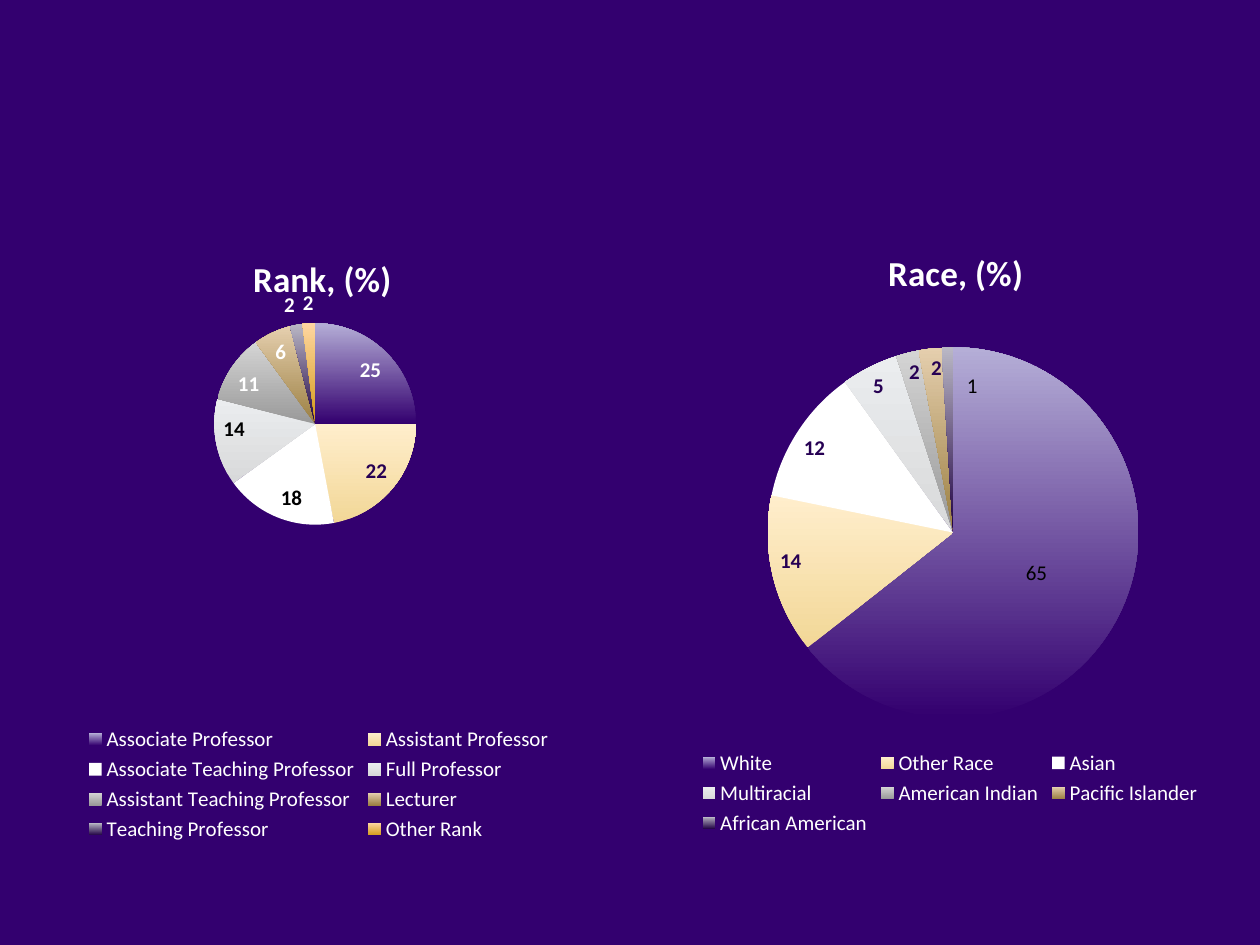
"""Build a slide with two pie charts: faculty by rank and by race."""
from lxml.etree import SubElement
from pptx import Presentation
from pptx.chart.data import CategoryChartData
from pptx.dml.color import RGBColor
from pptx.enum.chart import XL_CHART_TYPE, XL_LEGEND_POSITION as Legend
from pptx.enum.chart import XL_LABEL_POSITION as Label
from pptx.oxml.ns import qn
from pptx.util import Inches, Pt

FONT = "Calibri"
COLORS = {"purple": "33006F", "ink": "260053", "white": "FFFFFF",
          "black": "000000", "gold": "E8D3A2"}
SLICES = [("33006F", "B5AED7"), ("F2D797", "FFEECC"), ("FFFFFF",),
          ("D8D9DA", "EBEDEF"), ("999999", "D4D4D4"), ("9B7F42", "E5CFAE"),
          ("1F0043", "BAB8C5"), ("D39B19", "FFD6A1")]
IN, OUT, MID = Label.INSIDE_END, Label.OUTSIDE_END, Label.CENTER

PIES = [
    {"title": "Rank, (%)", "box": (0.15, 1.72, 4.76, 5),
     "title_at": (0.38, 0.05), "plot": (0.326, 0.169, 0.336, 0.32),
     "rows": [("Associate Professor", 25, "white", True, IN),
              ("Assistant Professor", 22, "ink", True, IN),
              ("Associate Teaching Professor", 18, "black", True, IN),
              ("Full Professor", 14, "black", True, IN),
              ("Assistant Teaching Professor", 11, "white", True, IN),
              ("Lecturer", 6, "white", True, IN),
              ("Teaching Professor", 2, "white", True, OUT),
              ("Other Rank", 2, "white", True, OUT)]},
    {"title": "Race, (%)", "box": (5.08, 1.67, 4.92, 5),
     "title_at": (0.39, 0.05), "plot": (0.206, 0.217, 0.598, 0.589),
     "last_label_shift": (0.04, 0.03),
     "rows": [("White", 65, "black", False, MID),
              ("Other Race", 14, "ink", True, IN),
              ("Asian", 12, "ink", True, IN),
              ("Multiracial", 5, "ink", True, IN),
              ("American Indian", 2, "ink", True, IN),
              ("Pacific Islander", 2, "ink", True, IN),
              ("African American", 1, "black", False, IN)]},
]


def rgb(value):
    return RGBColor.from_string(value)


def style(font, size=12, color="white", bold=False):
    font.name, font.size, font.bold = FONT, Pt(size), bold
    font.color.rgb = rgb(COLORS[color])


def write(frame, text, **format):
    run = frame.paragraphs[0].add_run()
    run.text = text
    style(run.font, **format)


def lay_out(parent, index, shares, inner=False, edge=True):
    for old in parent.findall(qn("c:layout")):
        parent.remove(old)
    layout = SubElement(parent, qn("c:layout"))
    parent.insert(index, layout)
    manual = SubElement(layout, qn("c:manualLayout"))
    settings = [("layoutTarget", "inner")] if inner else []
    if edge:
        settings += [("xMode", "edge"), ("yMode", "edge")]
    settings += zip("xywh", shares)
    for tag, value in settings:
        SubElement(manual, qn(f"c:{tag}")).set("val", str(value))


def paint(fill, colors):
    if len(colors) == 1:
        fill.solid()
        fill.fore_color.rgb = rgb(colors[0])
        return
    fill.gradient()
    fill.gradient_angle = 90
    for stop, color in zip(fill.gradient_stops, colors):
        stop.color.rgb = rgb(color)


def add_pie(slide, pie):
    rows = pie["rows"]
    data = CategoryChartData()
    data.categories = [row[0] for row in rows]
    data.add_series("Series 1", [row[1] for row in rows])
    box = [Inches(length) for length in pie["box"]]
    chart = slide.shapes.add_chart(XL_CHART_TYPE.PIE, *box, data).chart
    style(chart.font, size=10, color="gold")

    chart.has_title = True
    write(chart.chart_title.text_frame, pie["title"], size=20, bold=True)
    chart.has_legend = True
    chart.legend.position = Legend.BOTTOM
    chart.legend.include_in_layout = False
    style(chart.legend.font)

    plot = chart.plots[0]
    plot.vary_by_categories = True
    points = plot.series[0].points
    for index, (_, _, color, bold, position) in enumerate(rows):
        point = points[index]
        paint(point.format.fill, SLICES[index])
        point.format.line.fill.background()
        style(point.data_label.font, color=color, bold=bold)
        point.data_label.position = position

    root = chart.element
    lay_out(next(root.iter(qn("c:title"))), 1, pie["title_at"])
    lay_out(next(root.iter(qn("c:plotArea"))), 0, pie["plot"], inner=True)
    if "last_label_shift" in pie:
        last_label = list(root.iter(qn("c:dLbl")))[-1]
        lay_out(last_label, 1, pie["last_label_shift"], edge=False)


def main():
    deck = Presentation()
    deck.slide_width, deck.slide_height = Inches(10), Inches(7.5)
    slide = deck.slides.add_slide(deck.slide_layouts[6])
    slide.background.fill.solid()
    slide.background.fill.fore_color.rgb = rgb(COLORS["purple"])
    for pie in PIES:
        add_pie(slide, pie)
    deck.save("out.pptx")


if __name__ == "__main__":
    main()
